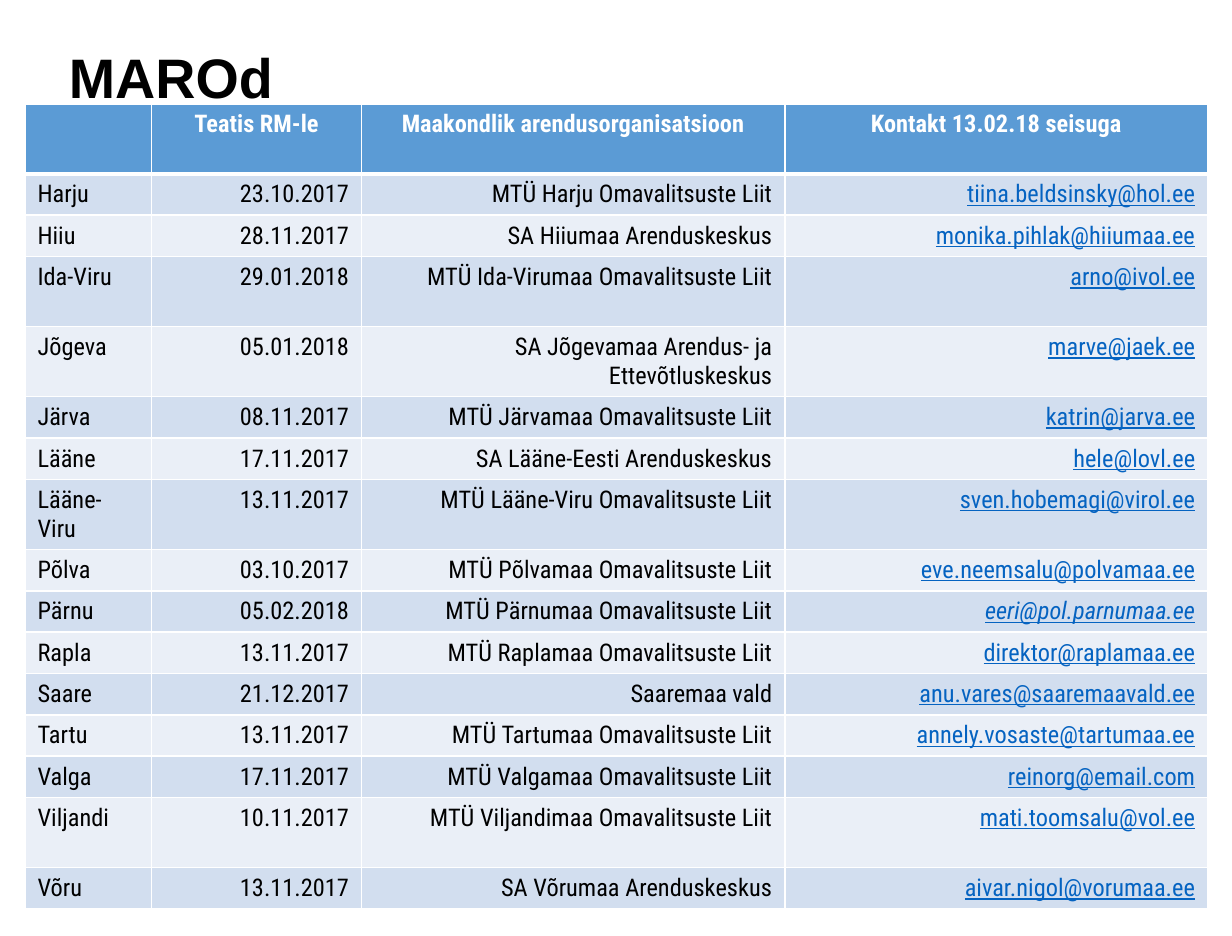
from dataclasses import dataclass

from lxml.etree import SubElement
from pptx import Presentation
from pptx.dml.color import RGBColor as RGB
from pptx.enum.text import MSO_ANCHOR as ANCHOR, MSO_AUTO_SIZE as AUTO_SIZE, PP_ALIGN as ALIGN
from pptx.oxml.ns import qn
from pptx.util import Cm, Inches, Pt


@dataclass(frozen=True)
class Theme:
    title_font: str = "Arial"
    body_font: str = "Roboto Condensed"
    title_size: int = 32
    body_size: int = 14
    text: str = "000000"
    white: str = "FFFFFF"
    link: str = "0563C1"
    header: str = "5B9BD5"
    odd: str = "D2DEEF"
    even: str = "EAEFF7"


THEME = Theme()
TITLE_BOX = (0.55, 0.35, 8.66, 0.71)
TABLE_BOX = (0.2, 0.83, 9.45, 6.43)
COLUMN_WIDTHS = (1.01, 1.68, 3.38, 3.38)
ROW_HEIGHT, TALL_HEIGHT = 0.33, 0.56
TALL_COUNTIES = ("", "Ida-Viru", "Jõgeva", "Lääne-Viru", "Viljandi")
ITALIC_CONTACT = "eeri@pol.parnumaa.ee"
HEADER = ("", "Teatis RM-le", "Maakondlik arendusorganisatsioon", "Kontakt 13.02.18 seisuga")
COUNTIES = (
    ("Harju", "23.10.2017", "MTÜ Harju Omavalitsuste Liit", "tiina.beldsinsky@hol.ee"),
    ("Hiiu", "28.11.2017", "SA Hiiumaa Arenduskeskus", "monika.pihlak@hiiumaa.ee"),
    ("Ida-Viru", "29.01.2018", "MTÜ Ida-Virumaa Omavalitsuste Liit", "arno@ivol.ee"),
    ("Jõgeva", "05.01.2018", "SA Jõgevamaa Arendus- ja Ettevõtluskeskus", "marve@jaek.ee"),
    ("Järva", "08.11.2017", "MTÜ Järvamaa Omavalitsuste Liit", "katrin@jarva.ee"),
    ("Lääne", "17.11.2017", "SA Lääne-Eesti Arenduskeskus", "hele@lovl.ee"),
    ("Lääne-Viru", "13.11.2017", "MTÜ Lääne-Viru Omavalitsuste Liit", "sven.hobemagi@virol.ee"),
    ("Põlva", "03.10.2017", "MTÜ Põlvamaa Omavalitsuste Liit", "eve.neemsalu@polvamaa.ee"),
    ("Pärnu", "05.02.2018", "MTÜ Pärnumaa Omavalitsuste Liit", ITALIC_CONTACT),
    ("Rapla", "13.11.2017", "MTÜ Raplamaa Omavalitsuste Liit", "direktor@raplamaa.ee"),
    ("Saare", "21.12.2017", "Saaremaa vald", "anu.vares@saaremaavald.ee"),
    ("Tartu", "13.11.2017", "MTÜ Tartumaa Omavalitsuste Liit", "annely.vosaste@tartumaa.ee"),
    ("Valga", "17.11.2017", "MTÜ Valgamaa Omavalitsuste Liit", "reinorg@email.com"),
    ("Viljandi", "10.11.2017", "MTÜ Viljandimaa Omavalitsuste Liit", "mati.toomsalu@vol.ee"),
    ("Võru", "13.11.2017", "SA Võrumaa Arenduskeskus", "aivar.nigol@vorumaa.ee"),
)


def style_font(font, name, size, color, bold=False):
    font.name = name
    font.size = Pt(size)
    font.bold = bold
    font.color.rgb = RGB.from_string(color)


def set_borders(cell, bottom):
    tc_pr = cell._tc.get_or_add_tcPr()
    widths = (("a:lnL", 1), ("a:lnR", 1), ("a:lnT", 1), ("a:lnB", bottom))
    for i, (tag, width) in enumerate(widths):
        ln = SubElement(tc_pr, qn(tag), w=str(Pt(width)))
        fill = SubElement(ln, qn("a:solidFill"))
        SubElement(fill, qn("a:srgbClr"), val=THEME.white)
        tc_pr.insert(i, ln)


def fill_cell(cell, text, row, column):
    is_header = row == 0
    is_contact = column == 3 and not is_header
    fill = THEME.header if is_header else THEME.odd if row % 2 else THEME.even
    cell.fill.solid()
    cell.fill.fore_color.rgb = RGB.from_string(fill)
    set_borders(cell, 3 if is_header else 1)
    cell.text_frame.text = text
    p = cell.text_frame.paragraphs[0]
    p.alignment = ALIGN.CENTER if is_header else ALIGN.RIGHT if column else ALIGN.LEFT
    color = THEME.white if is_header else THEME.link if is_contact else THEME.text
    for r in p.runs:
        style_font(r.font, THEME.body_font, THEME.body_size, color, is_header)
        r.font.underline = is_contact
        r.font.italic = text == ITALIC_CONTACT


def add_title(slide, box, text):
    sp = slide.shapes.title
    sp.left, sp.top, sp.width, sp.height = map(Inches, box)
    tf = sp.text_frame
    tf.text = text
    tf.word_wrap = True
    tf.auto_size = AUTO_SIZE.NONE
    tf.vertical_anchor = ANCHOR.TOP
    tf.margin_left = tf.margin_right = tf.margin_bottom = 0
    tf.margin_top = Inches(0.06)
    p = tf.paragraphs[0]
    p.alignment = ALIGN.LEFT
    p.line_spacing = 0.88
    style_font(p.runs[0].font, THEME.title_font, THEME.title_size, THEME.text, True)


def add_county_table(slide, box):
    records = (HEADER, *COUNTIES)
    table = slide.shapes.add_table(len(records), len(HEADER), *map(Inches, box)).table
    for column, width in zip(table.columns, COLUMN_WIDTHS):
        column.width = Inches(width)
    for i, record in enumerate(records):
        table.rows[i].height = Inches(TALL_HEIGHT if record[0] in TALL_COUNTIES else ROW_HEIGHT)
        for j, text in enumerate(record):
            fill_cell(table.cell(i, j), text, i, j)


def main():
    prs = Presentation()
    prs.slide_width, prs.slide_height = Cm(25), Cm(19)
    slide = prs.slides.add_slide(prs.slide_layouts[5])
    add_title(slide, TITLE_BOX, "MAROd")
    add_county_table(slide, TABLE_BOX)
    prs.save("out.pptx")


if __name__ == "__main__":
    main()
